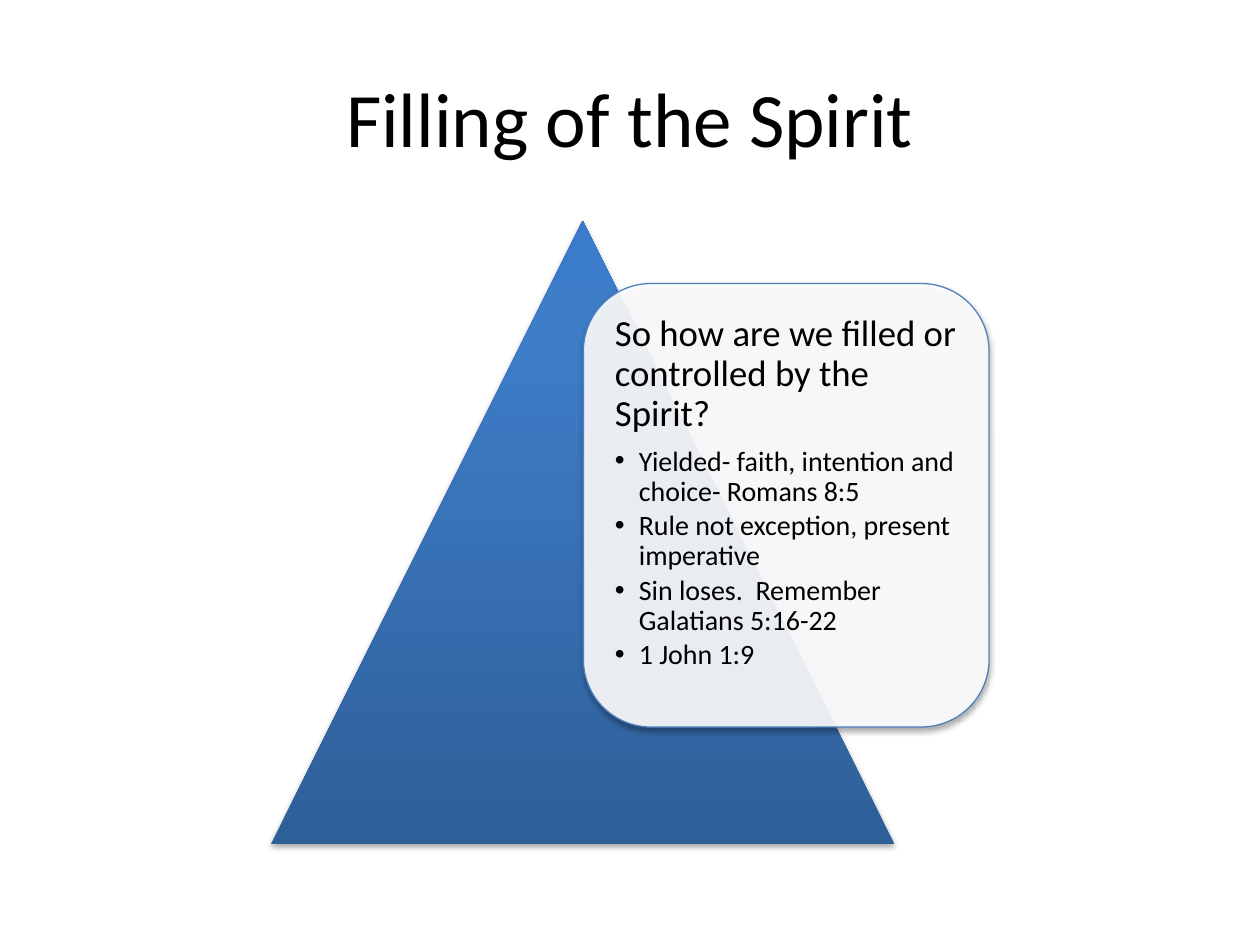
from lxml.etree import SubElement
from pptx import Presentation
from pptx.dml.color import RGBColor
from pptx.enum.shapes import MSO_SHAPE
from pptx.enum.text import MSO_ANCHOR, MSO_AUTO_SIZE, PP_ALIGN
from pptx.oxml import parse_xml
from pptx.oxml.ns import nsdecls, qn
from pptx.util import Pt

PX = 9144
FONT = "Calibri"
COLORS = {
    "text": "000000",
    "card": "FFFFFF",
    "outline": "4F81BD",
    "shadow": "000000",
    "base": "2F5F99",
    "slope": "3D7CC7",
    "peak": "3A7CCB",
}
QUESTION = "So how are we filled or controlled by the Spirit?"
ANSWERS = [
    "Yielded- faith, intention and choice- Romans 8:5",
    "Rule not exception, present imperative",
    "Sin loses.  Remember Galatians 5:16-22",
    "1 John 1:9",
]


def px(value):
    return round(value * PX)


def rgb(name):
    return RGBColor.from_string(COLORS[name])


def place(shape, box):
    shape.left, shape.top, shape.width, shape.height = map(px, box)


def write(paragraph, text, *, size, color="text", align=PP_ALIGN.LEFT,
          spacing=None, after=0, level=0, bullet=None, indent=0):
    paragraph.alignment = align
    paragraph.level = level
    paragraph.line_spacing = spacing
    paragraph.space_before = Pt(0)
    paragraph.space_after = Pt(after)
    properties = paragraph._p.get_or_add_pPr()
    properties.set("marL", str(px(indent)))
    properties.set("indent", str(px(-indent)))
    if bullet:
        SubElement(properties, qn("a:buChar"), char=bullet)
    else:
        SubElement(properties, qn("a:buNone"))
    run = paragraph.add_run()
    run.text = text
    run.font.name = FONT
    run.font.size = Pt(size)
    run.font.color.rgb = rgb(color)


def add_shadow(shape):
    shape.shadow.inherit = False
    effects = shape._element.spPr.find(qn("a:effectLst"))
    effects.append(parse_xml(
        f'<a:outerShdw {nsdecls("a")} blurRad="{Pt(3.1)}" dist="{Pt(1.8)}" '
        f'dir="5400000" rotWithShape="0"><a:srgbClr val="{COLORS["shadow"]}">'
        '<a:alpha val="35000"/></a:srgbClr></a:outerShdw>'))


def fill_upward(shape, stops):
    shape.fill.gradient()
    gradient = shape._element.spPr.find(qn("a:gradFill"))
    marks = "".join(
        f'<a:gs pos="{percent * 1000}"><a:srgbClr val="{COLORS[name]}"/></a:gs>'
        for percent, name in stops)
    gradient.getparent().replace(gradient, parse_xml(
        f'<a:gradFill {nsdecls("a")} rotWithShape="1"><a:gsLst>{marks}</a:gsLst>'
        '<a:lin ang="16200000" scaled="0"/></a:gradFill>'))


def build_title(slide, box):
    title = slide.shapes.title
    place(title, box)
    title.text_frame.vertical_anchor = MSO_ANCHOR.MIDDLE
    write(title.text_frame.paragraphs[0], "Filling of the Spirit",
          size=44, align=PP_ALIGN.CENTER)


def build_pyramid(slide, box):
    pyramid = slide.shapes.add_shape(MSO_SHAPE.ISOSCELES_TRIANGLE, *map(px, box))
    fill_upward(pyramid, [(0, "base"), (80, "slope"), (100, "peak")])
    pyramid.line.fill.background()
    add_shadow(pyramid)


def build_card(slide, box):
    left, top, width, height = box
    card = slide.shapes.add_shape(MSO_SHAPE.ROUNDED_RECTANGLE, *map(px, box))
    card.fill.solid()
    card.fill.fore_color.rgb = rgb("card")
    tint = card._element.spPr.find(f"{qn('a:solidFill')}/{qn('a:srgbClr')}")
    SubElement(tint, qn("a:alpha"), val="90000")
    card.line.color.rgb = rgb("outline")
    card.line.width = Pt(0.75)
    add_shadow(card)

    margin = 16
    answers = slide.placeholders[1]
    place(answers, (left + margin, top + margin,
                    width - 2 * margin, height - 2 * margin))
    slide.shapes._spTree.append(answers._element)
    frame = answers.text_frame
    frame.word_wrap = True
    frame.auto_size = MSO_AUTO_SIZE.NONE
    frame.vertical_anchor = MSO_ANCHOR.TOP
    frame.margin_left = frame.margin_right = px(9)
    frame.margin_top = frame.margin_bottom = px(9)
    write(frame.paragraphs[0], QUESTION, size=21, spacing=0.9, after=7.35)
    for answer in ANSWERS:
        write(frame.add_paragraph(), answer, size=16, spacing=0.9, after=2.4,
              level=1, bullet="•", indent=19)


def main():
    deck = Presentation()
    deck.slide_width, deck.slide_height = px(1000), px(750)
    slide = deck.slides.add_slide(deck.slide_layouts[1])
    build_title(slide, (50, 30, 900, 125))
    build_pyramid(slide, (215, 175, 495, 495))
    build_card(slide, (463, 225, 322, 352))
    deck.save("out.pptx")


if __name__ == "__main__":
    main()
